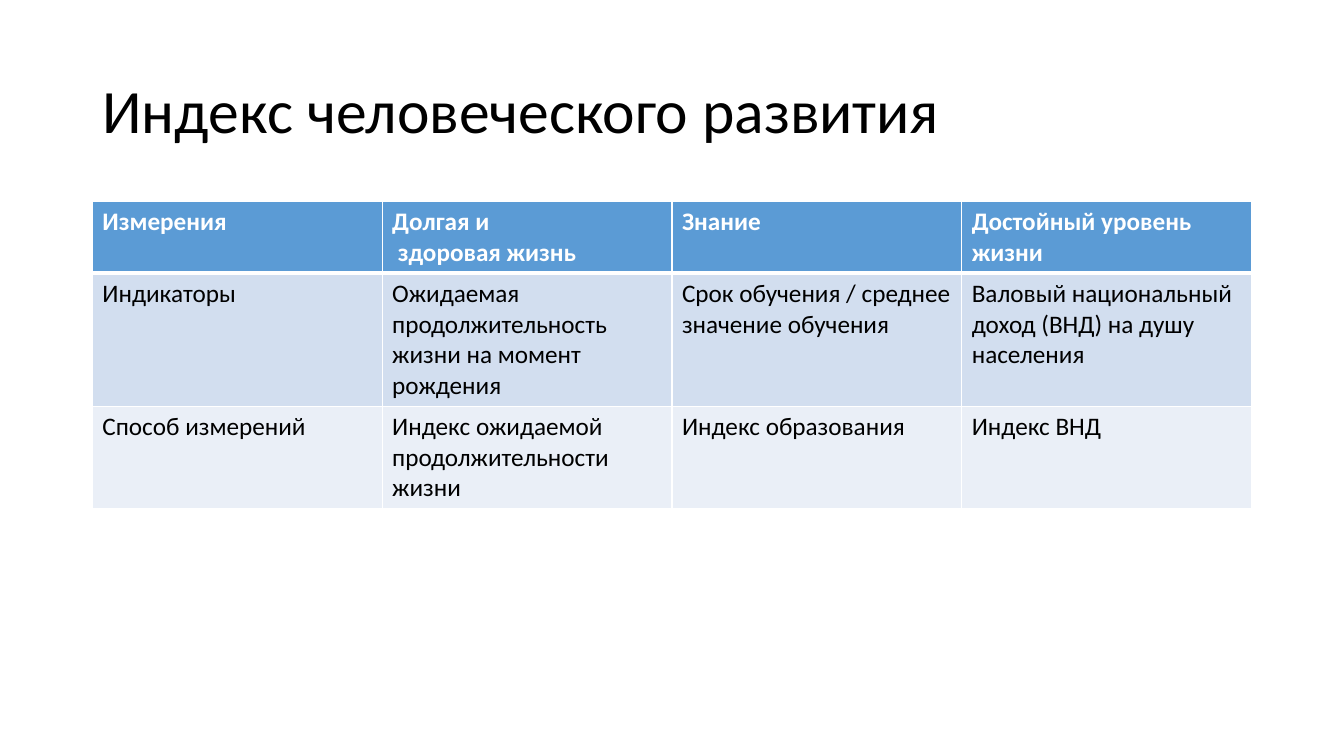
"""Build a slide with a table of the human development index."""
from pptx import Presentation
from pptx.dml.color import RGBColor
from pptx.enum import text
from pptx.oxml import parse_xml
from pptx.oxml.ns import nsdecls
from pptx.util import Pt

TITLE = "Индекс человеческого развития"
ROWS = [
    ["Измерения", "Долгая и\n здоровая жизнь", "Знание", "Достойный уровень жизни"],
    ["Индикаторы", "Ожидаемая продолжительность\nжизни на момент рождения",
     "Срок обучения / среднее\nзначение обучения",
     "Валовый национальный доход (ВНД) на душу населения"],
    ["Способ измерений", "Индекс ожидаемой продолжительности жизни",
     "Индекс образования", "Индекс ВНД"],
]
FILLS = ["5B9BD5", "D2DEEF", "EAEFF7"]
HEIGHTS = [51, 95, 73]
LEFT, WIDTH = 66, 828
WHITE, BLACK = "FFFFFF", "000000"


def rgb(value):
    return RGBColor.from_string(value)


def write(tf, content, size=18, color=BLACK, bold=False, spacing=1.0):
    for i, line in enumerate(content.split("\n")):
        p = tf.add_paragraph() if i else tf.paragraphs[0]
        p.alignment = text.PP_ALIGN.LEFT
        p.line_spacing = spacing
        r = p.add_run()
        r.text = line
        r.font.name, r.font.size, r.font.bold = "Calibri", Pt(size), bold
        r.font.color.rgb = rgb(color)


def add_borders(cell, bottom):
    widths = {"lnL": 1, "lnR": 1, "lnT": 1, "lnB": bottom}
    for i, (side, width) in enumerate(widths.items()):
        cell._tc.get_or_add_tcPr().insert(i, parse_xml(
            f'<a:{side} {nsdecls("a")} w="{Pt(width)}"><a:solidFill>'
            f'<a:srgbClr val="{WHITE}"/></a:solidFill></a:{side}>'))


def main():
    prs = Presentation()
    prs.slide_width, prs.slide_height = Pt(960), Pt(540)
    s = prs.slides.add_slide(prs.slide_layouts[5])

    title = s.shapes.title
    title.left, title.top, title.width, title.height = map(Pt, (LEFT, 28.75, WIDTH, 104.4))
    title.text_frame.vertical_anchor = text.MSO_ANCHOR.MIDDLE
    write(title.text_frame, TITLE, size=44, spacing=0.9)

    table = s.shapes.add_table(len(ROWS), len(ROWS[0]), Pt(LEFT), Pt(144),
                               Pt(WIDTH), Pt(sum(HEIGHTS))).table
    for i, (row, fill, height) in enumerate(zip(ROWS, FILLS, HEIGHTS)):
        header = i == 0
        table.rows[i].height = Pt(height)
        for j, content in enumerate(row):
            cell = table.cell(i, j)
            cell.fill.solid()
            cell.fill.fore_color.rgb = rgb(fill)
            add_borders(cell, bottom=3 if header else 1)
            write(cell.text_frame, content, color=WHITE if header else BLACK, bold=header)

    prs.save("out.pptx")


if __name__ == "__main__":
    main()
